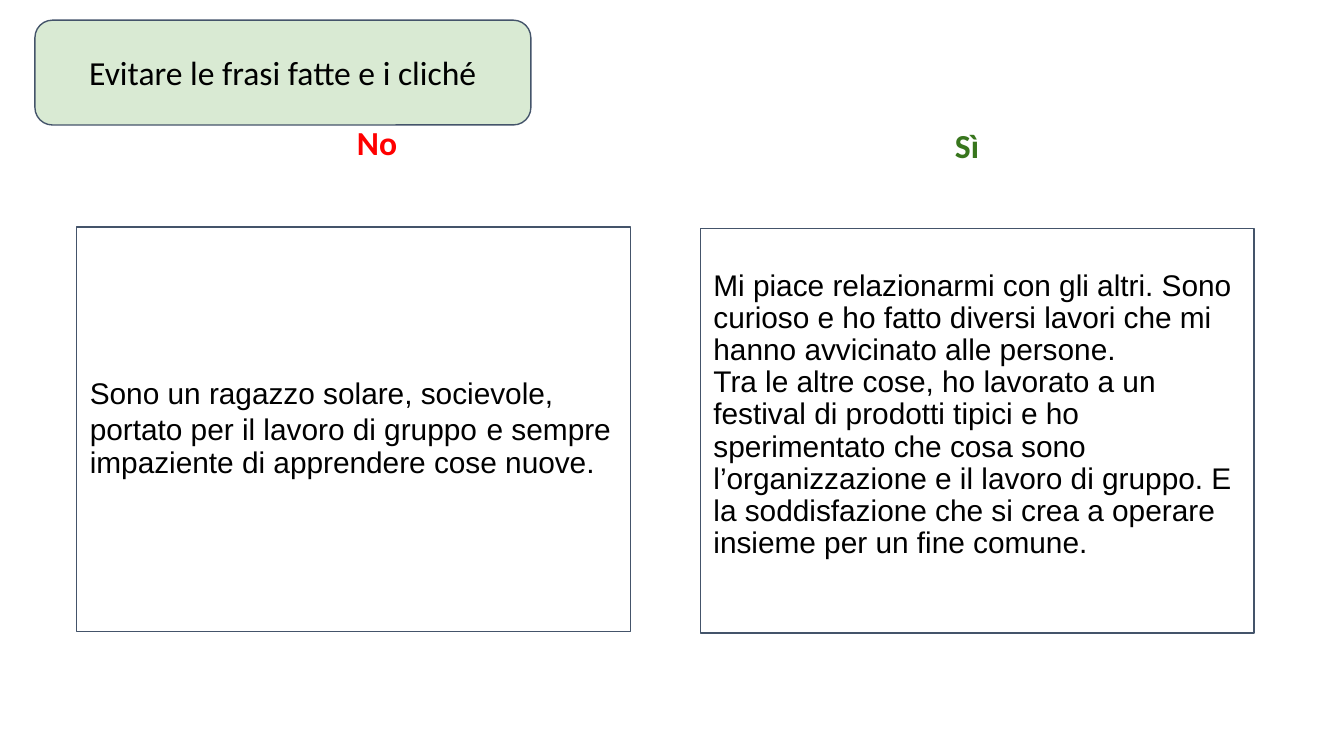
from dataclasses import dataclass

from pptx import Presentation
from pptx.dml.color import RGBColor
from pptx.enum.shapes import MSO_SHAPE as Shape
from pptx.enum.text import MSO_ANCHOR as Anchor, MSO_AUTO_SIZE as AutoSize, PP_ALIGN as Align
from pptx.util import Emu, Pt

SCALE = 4572  # EMU per px, 200 px to the inch
BLACK = RGBColor(0x00, 0x00, 0x00)
RED = RGBColor(0xFF, 0x00, 0x00)
GREEN = RGBColor(0x38, 0x76, 0x1D)
PALE_GREEN = RGBColor(0xD9, 0xEA, 0xD3)
SLATE = RGBColor(0x44, 0x54, 0x6A)

COMPARISON_LAYOUT = 4
BOX_WIDTH, BOX_HEIGHT = 824, 602
HEADING_HEIGHT = 136


@dataclass
class Heading:
    placeholder: int
    text: str
    color: RGBColor
    left: int
    top: int
    width: int
    anchor: Anchor


@dataclass
class Example:
    left: int
    top: int
    paragraphs: list  # each paragraph is a list of (text, size) runs
    bottom_inset: int = 20


HEADINGS = [
    Heading(1, "No", RED, 138, 174, 846, Anchor.TOP),
    Heading(3, "Sì", GREEN, 1014, 152, 850, Anchor.MIDDLE),
]
EXAMPLES = [
    Example(114, 338, [[
        ("Sono un ragazzo solare, socievole, portato per il lavoro di gruppo", 16),
        (" ", 18),
        ("e sempre impaziente di apprendere cose nuove.", 16),
    ]]),
    Example(1042, 340, [
        [("Mi piace relazionarmi con gli altri. Sono curioso e ho fatto diversi "
          "lavori che mi hanno avvicinato alle persone.", 16)],
        [("Tra le altre cose, ho lavorato a un festival di prodotti tipici e ho "
          "sperimentato che cosa sono l’organizzazione e il lavoro di gruppo. E la "
          "soddisfazione che si crea a operare insieme per un fine comune.", 16)],
    ], bottom_inset=66),
]


def px(length: int) -> Emu:
    return Emu(length * SCALE)


def format_run(run, font: str, size: int, color: RGBColor, bold: bool = False) -> None:
    run.font.name = font
    run.font.size = Pt(size)
    run.font.color.rgb = color
    run.font.bold = bold


def set_frame(frame, inset: int, anchor: Anchor) -> None:
    frame.word_wrap = True
    frame.auto_size = AutoSize.NONE
    frame.vertical_anchor = anchor
    frame.margin_left = frame.margin_right = px(inset)
    frame.margin_top = frame.margin_bottom = px(inset)


def add_box(slide, kind: Shape, left: int, top: int, width: int, height: int):
    shape = slide.shapes.add_shape(kind, px(left), px(top), px(width), px(height))
    shape.shadow.inherit = False
    shape.fill.background()
    shape.line.color.rgb = SLATE
    shape.line.width = Pt(0.75)
    set_frame(shape.text_frame, 20, Anchor.MIDDLE)
    return shape


def fill_heading(slide, heading: Heading) -> None:
    shape = slide.placeholders[heading.placeholder]
    shape.left, shape.top = px(heading.left), px(heading.top)
    shape.width, shape.height = px(heading.width), px(HEADING_HEIGHT)
    set_frame(shape.text_frame, 14, heading.anchor)
    shape.text_frame.text = heading.text
    paragraph = shape.text_frame.paragraphs[0]
    paragraph.alignment = Align.CENTER
    paragraph.line_spacing = 0.9
    paragraph.space_before = Pt(0)
    format_run(paragraph.runs[0], "Calibri", 18, heading.color, bold=True)


def add_example(slide, example: Example) -> None:
    shape = add_box(slide, Shape.RECTANGLE, example.left, example.top, BOX_WIDTH, BOX_HEIGHT)
    frame = shape.text_frame
    frame.margin_bottom = px(example.bottom_inset)
    for index, runs in enumerate(example.paragraphs):
        paragraph = frame.add_paragraph() if index else frame.paragraphs[0]
        paragraph.alignment = Align.LEFT
        paragraph.line_spacing = 0.9
        for text, size in runs:
            run = paragraph.add_run()
            run.text = text
            format_run(run, "Arial", size, BLACK)


def add_topic(slide, text: str) -> None:
    shape = add_box(slide, Shape.ROUNDED_RECTANGLE, 52, 30, 738, 156)
    shape.fill.solid()
    shape.fill.fore_color.rgb = PALE_GREEN
    shape.text_frame.text = text
    paragraph = shape.text_frame.paragraphs[0]
    paragraph.alignment = Align.CENTER
    format_run(paragraph.runs[0], "Calibri", 18, BLACK)


def main() -> None:
    presentation = Presentation()
    presentation.slide_width, presentation.slide_height = px(2000), px(1125)
    slide = presentation.slides.add_slide(presentation.slide_layouts[COMPARISON_LAYOUT])

    # Column headings
    for heading in HEADINGS:
        fill_heading(slide, heading)

    # Unused placeholders
    for placeholder in list(slide.placeholders):
        if not placeholder.text_frame.text:
            placeholder.element.getparent().remove(placeholder.element)

    # Example texts
    for example in EXAMPLES:
        add_example(slide, example)

    # Topic label
    add_topic(slide, "Evitare le frasi fatte e i cliché")

    presentation.save("out.pptx")


if __name__ == "__main__":
    main()
